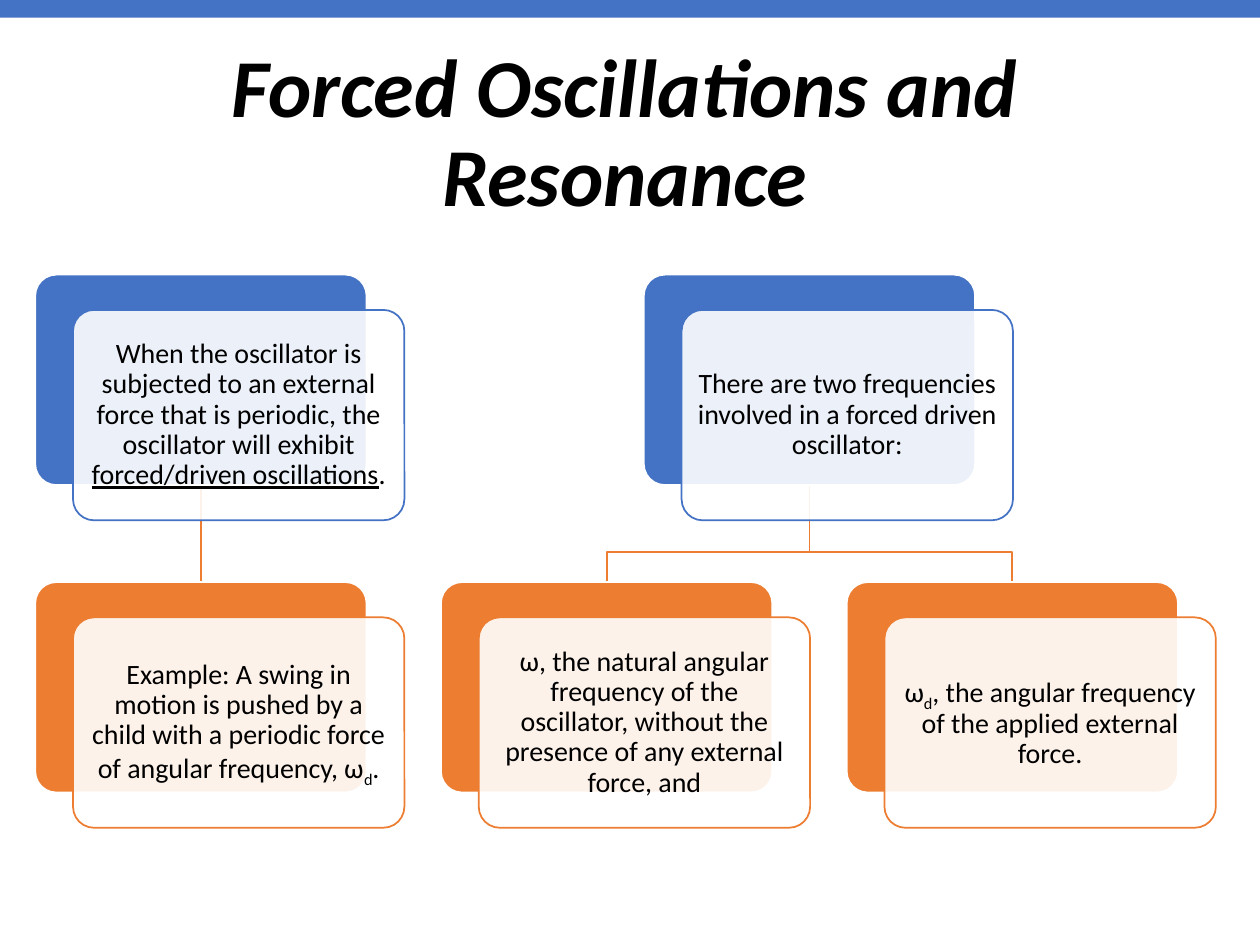
"""Builds the slide on forced oscillations and resonance."""
import pptx
import pptx.util
import pptx.dml.color
import pptx.enum.shapes
import pptx.enum.text
import lxml.etree
from pptx.oxml.ns import qn

HUES = {"blue": "4472C4", "orange": "ED7D31", "white": "FFFFFF", "black": "000000"}
inch, pt = pptx.util.Inches, pptx.util.Pt
kinds = pptx.enum.shapes.MSO_SHAPE
color = {k: pptx.dml.color.RGBColor.from_string(v) for k, v in HUES.items()}

deck = pptx.Presentation()
deck.slide_width, deck.slide_height = inch(10), inch(7.5)
slide = deck.slides.add_slide(deck.slide_layouts[5])
shapes = slide.shapes

LEFT, TOP = 0.28, 2.18
COL, ROW = 3.22, 2.44
WIDE, HIGH = 2.63, 1.67
BEND = 4.38
PLAIN, UNDER, SUB = {}, {"underline": True}, {"baseline": "-25000"}

CARDS = [
    (0, 0, "blue", [("When the oscillator is subjected to an external force that is "
                     "periodic, the oscillator will exhibit ", PLAIN),
                    ("forced/driven oscillations", UNDER), (".", PLAIN)]),
    (0, 1, "orange", [("Example: A swing in motion is pushed by a child with a "
                       "periodic force of angular frequency, ω", PLAIN),
                      ("d", SUB), (".", PLAIN)]),
    (1.5, 0, "blue", [("There are two frequencies involved in a forced driven "
                       "oscillator:", PLAIN)]),
    (1, 1, "orange", [("ω, the natural angular frequency of the oscillator, without "
                       "the presence of any external force, and", PLAIN)]),
    (2, 1, "orange", [("ω", PLAIN), ("d", SUB),
                      (", the angular frequency of the applied external force.", PLAIN)]),
]


def write(frame, parts, look, inset):
    """Fills a frame with one centred paragraph of formatted runs."""
    form = {"word_wrap": True, "auto_size": pptx.enum.text.MSO_AUTO_SIZE.NONE,
            "vertical_anchor": pptx.enum.text.MSO_ANCHOR.MIDDLE}
    form.update({"margin_" + side: inch(inset) for side in ("left", "right", "top", "bottom")})
    for name, value in form.items():
        setattr(frame, name, value)
    para = frame.paragraphs[0]
    para.alignment = pptx.enum.text.PP_ALIGN.CENTER
    para.line_spacing, para.space_after = 0.9, pt(6)
    for words, extra in parts:
        run = para.add_run()
        run.text = words
        run.font.color.rgb = color["black"]
        for name, value in {"name": "Calibri", **look, **extra}.items():
            if name == "baseline":
                run._r.get_or_add_rPr().set(name, value)
            else:
                setattr(run.font, name, value)


def block(kind, x, y, wide, high, fill, line=None):
    """Adds a filled shape with an optional outline."""
    shape = shapes.add_shape(kind, inch(x), inch(y), inch(wide), inch(high))
    shape.shadow.inherit = False
    shape.fill.solid()
    shape.fill.fore_color.rgb = color[fill]
    if line:
        shape.adjustments[0] = 0.1
        shape.line.color.rgb, shape.line.width = color[line], pt(1)
    else:
        shape.line.fill.background()
    return shape


title = shapes.title
spot = {"left": 0.28, "top": 0.35, "width": 9.36, "height": 1.45}
for name, value in spot.items():
    setattr(title, name, inch(value))
write(title.text_frame, [("Forced Oscillations and Resonance", PLAIN)],
      {"size": pt(47), "bold": True, "italic": True}, 0.1)
block(kinds.RECTANGLE, 0, 0, 10, 0.14, "blue")

mid = LEFT + WIDE / 2
start = mid + 1.5 * COL
for col in (2, 1):
    end = mid + col * COL
    path = shapes.build_freeform(inch(start), inch(TOP + HIGH))
    path.add_line_segments([(inch(start), inch(BEND)), (inch(end), inch(BEND)),
                            (inch(end), inch(TOP + ROW))], close=False)
    branch = path.convert_to_shape()
    branch.shadow.inherit = False
    branch.fill.background()
    branch.line.color.rgb, branch.line.width = color["orange"], pt(1)

link = shapes.add_connector(pptx.enum.shapes.MSO_CONNECTOR.STRAIGHT, inch(mid),
                            inch(TOP + HIGH), inch(mid), inch(TOP + ROW))
link.line.color.rgb, link.line.width = color["orange"], pt(1)
lxml.etree.SubElement(link._element.spPr, qn("a:effectLst"))

backs = []
for col, row, hue, parts in CARDS:
    x, y = LEFT + col * COL, TOP + row * ROW
    backs.append(block(kinds.ROUNDED_RECTANGLE, x, y, WIDE, HIGH, hue, "white"))
    front = block(kinds.ROUNDED_RECTANGLE, x + 0.3, y + 0.28, WIDE, HIGH, "white", hue)
    tint = front._element.spPr.find(qn("a:solidFill"))[0]
    lxml.etree.SubElement(tint, qn("a:alpha")).set("val", "90000")
    write(front.text_frame, parts, {"size": pt(16)}, 0.07)

link.begin_connect(backs[0], 2)
link.end_connect(backs[1], 0)

deck.save("out.pptx")
